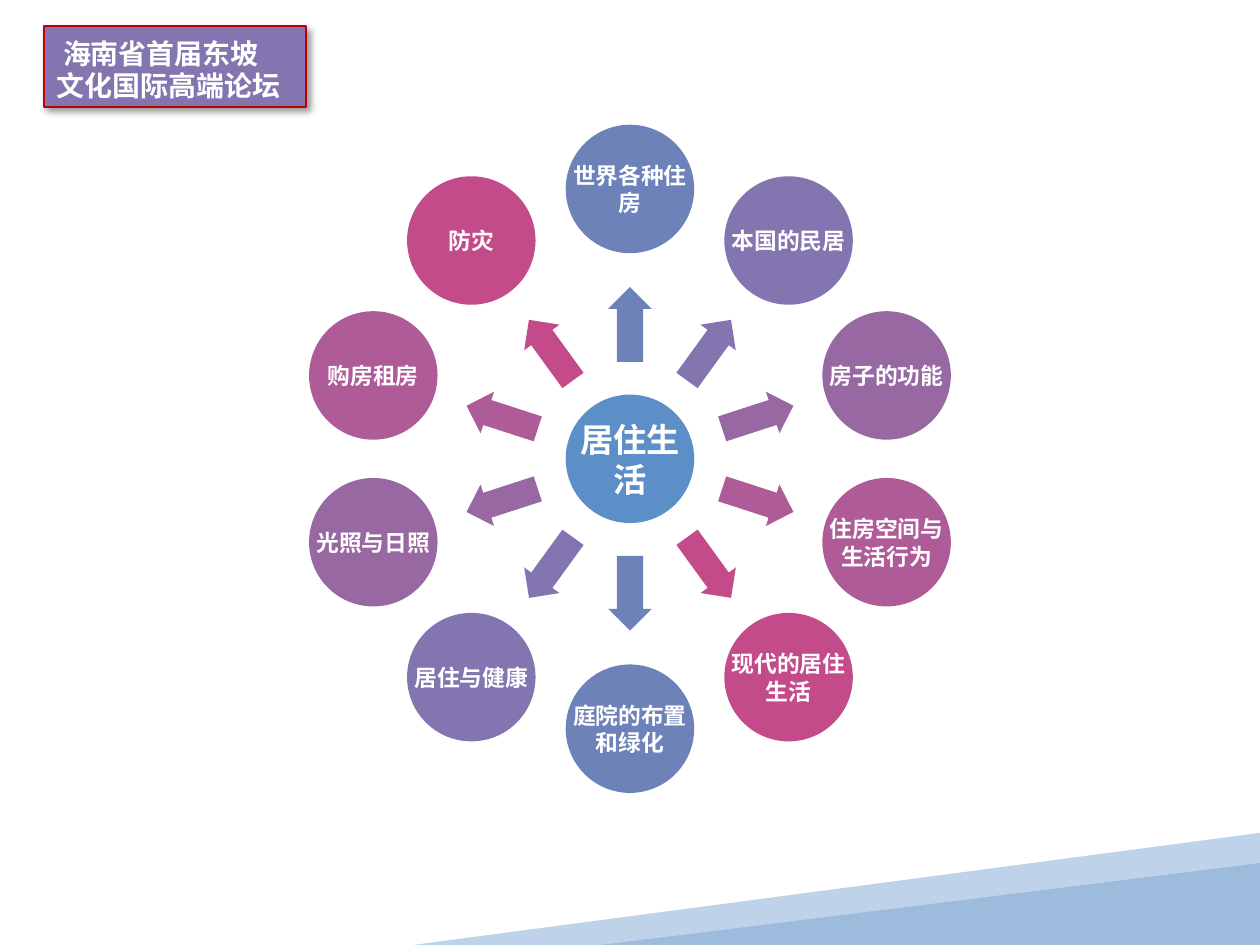
from dataclasses import dataclass
from math import cos, radians, sin

from lxml.etree import SubElement
from pptx import Presentation
from pptx.dml.color import RGBColor
from pptx.enum.shapes import MSO_SHAPE
from pptx.enum.text import MSO_ANCHOR, MSO_AUTO_SIZE, PP_ALIGN
from pptx.oxml.ns import qn
from pptx.util import Cm, Pt

FONT = "Noto Sans CJK SC"
COLORS = {
    "white": "FFFFFF", "black": "000000", "border": "C00000",
    "pale": "BED2E9", "sky": "9DBCDD", "hub": "5C8FC7",
    "blue": "6E82BA", "violet": "8376B0", "purple": "9868A3",
    "mauve": "AE5B97", "pink": "C44B8A",
}
SPOKE_COLORS = ["blue", "violet", "purple", "mauve", "pink"]
TOPICS = [
    "世界各种住房", "本国的民居", "房子的功能", "住房空间与生活行为",
    "现代的居住生活", "庭院的布置和绿化", "居住与健康", "光照与日照",
    "购房租房", "防灾",
]

# Wheel geometry in centimetres
CENTER_X, CENTER_Y = 12.7, 9.25
DIAMETER = 2.59
TOPIC_RADIUS, ARROW_RADIUS = 5.44, 2.71
ARROW_LENGTH, ARROW_WIDTH = 1.51, 0.88


@dataclass
class Bubble:
    text: str
    color: str
    x: float
    y: float
    size: float = 13
    leading: float = 15.7


def rgb(name: str) -> RGBColor:
    return RGBColor.from_string(COLORS[name])


def paint(shape, color: str) -> None:
    shape.shadow.inherit = False
    shape.fill.solid()
    shape.fill.fore_color.rgb = rgb(color)
    shape.line.fill.background()


def format_text(text_frame, size: float, leading: float, alignment) -> None:
    text_frame.word_wrap = True
    text_frame.auto_size = MSO_AUTO_SIZE.NONE
    text_frame.vertical_anchor = MSO_ANCHOR.MIDDLE
    for paragraph in text_frame.paragraphs:
        paragraph.alignment = alignment
        paragraph.line_spacing = Pt(leading)
        for run in paragraph.runs:
            run.font.name = FONT
            run.font.size = Pt(size)
            run.font.bold = True
            run.font.color.rgb = rgb("white")
            SubElement(run.font._element, qn("a:ea"), typeface=FONT)


def add_shadow(shape) -> None:
    shape.shadow.inherit = False
    effects = shape._element.spPr.find(qn("a:effectLst"))
    shadow = SubElement(effects, qn("a:outerShdw"), blurRad=str(Pt(4)),
                        dist=str(Pt(3)), dir="2700000", algn="tl", rotWithShape="0")
    color = SubElement(shadow, qn("a:srgbClr"), val=COLORS["black"])
    SubElement(color, qn("a:alpha"), val="40000")


def add_bubble(slide, bubble: Bubble) -> None:
    box = (Cm(bubble.x - DIAMETER / 2), Cm(bubble.y - DIAMETER / 2),
           Cm(DIAMETER), Cm(DIAMETER))
    paint(slide.shapes.add_shape(MSO_SHAPE.OVAL, *box), bubble.color)
    # The label uses the full width of the circle
    text_frame = slide.shapes.add_textbox(*box).text_frame
    text_frame.text = bubble.text
    text_frame.margin_left = text_frame.margin_right = Cm(0.05)
    text_frame.margin_top = text_frame.margin_bottom = Cm(0.05)
    format_text(text_frame, bubble.size, bubble.leading, PP_ALIGN.CENTER)


def add_arrow(slide, angle: float, color: str) -> None:
    x = CENTER_X + ARROW_RADIUS * cos(radians(angle))
    y = CENTER_Y + ARROW_RADIUS * sin(radians(angle))
    arrow = slide.shapes.add_shape(
        MSO_SHAPE.RIGHT_ARROW, Cm(x - ARROW_LENGTH / 2), Cm(y - ARROW_WIDTH / 2),
        Cm(ARROW_LENGTH), Cm(ARROW_WIDTH))
    arrow.adjustments[0] = 0.6
    arrow.adjustments[1] = 0.5
    arrow.rotation = angle % 360
    paint(arrow, color)


def add_corner(slide) -> None:
    builder = slide.shapes.build_freeform(Cm(25.4), Cm(16.79))
    builder.add_line_segments([(Cm(25.4), Cm(18.9)), (Cm(17.1), Cm(19.05)),
                               (Cm(8.33), Cm(19.05))])
    paint(builder.convert_to_shape(), "pale")
    triangle = slide.shapes.add_shape(
        MSO_SHAPE.ISOSCELES_TRIANGLE, Cm(12.12), Cm(17.4), Cm(13.28), Cm(1.65))
    triangle.adjustments[0] = 1
    paint(triangle, "sky")


def add_wheel(slide) -> None:
    add_bubble(slide, Bubble("居住生活", "hub", CENTER_X, CENTER_Y, 19, 22.9))
    for index, topic in enumerate(TOPICS):
        angle = -90 + index * 360 / len(TOPICS)
        color = SPOKE_COLORS[index % len(SPOKE_COLORS)]
        add_arrow(slide, angle, color)
        add_bubble(slide, Bubble(topic, color,
                                 CENTER_X + TOPIC_RADIUS * cos(radians(angle)),
                                 CENTER_Y + TOPIC_RADIUS * sin(radians(angle))))


def format_title(title) -> None:
    title.left, title.top, title.width, title.height = (
        Cm(0.89), Cm(0.53), Cm(5.28), Cm(1.63))
    title.fill.solid()
    title.fill.fore_color.rgb = rgb("violet")
    title.line.color.rgb = rgb("border")
    title.line.width = Pt(1)
    add_shadow(title)
    text_frame = title.text_frame
    text_frame.text = " 海南省首届东坡\n文化国际高端论坛"
    text_frame.margin_top, text_frame.margin_bottom = Cm(0.17), Cm(0.05)
    format_text(text_frame, 16, 18.8, PP_ALIGN.LEFT)


def main() -> None:
    presentation = Presentation()
    presentation.slide_width, presentation.slide_height = Cm(25.4), Cm(19.05)
    slide = presentation.slides.add_slide(presentation.slide_layouts[5])
    add_corner(slide)
    add_wheel(slide)
    format_title(slide.shapes.title)
    presentation.save("out.pptx")


if __name__ == "__main__":
    main()
